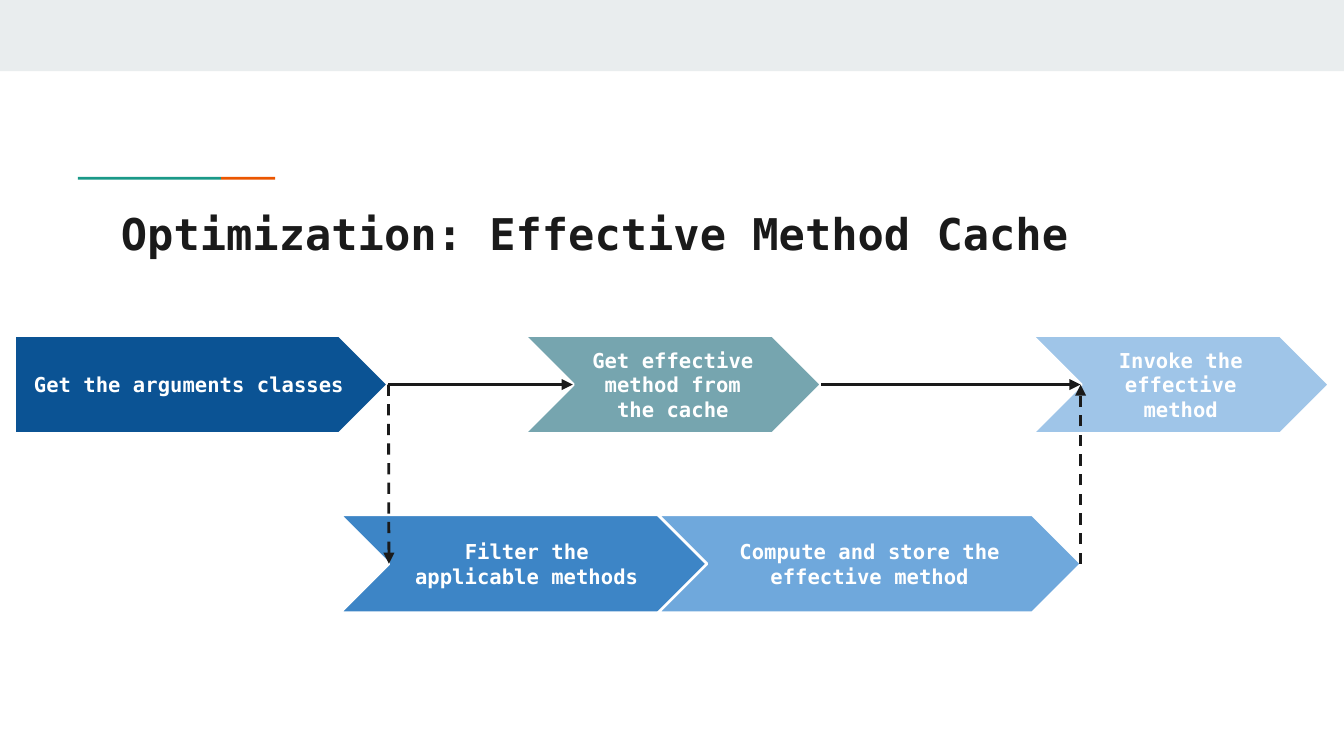
from pptx import Presentation
from pptx.dml.color import RGBColor
from pptx.enum.dml import MSO_LINE
from pptx.enum.shapes import MSO_CONNECTOR, MSO_SHAPE
from pptx.enum.text import MSO_ANCHOR, PP_ALIGN
from pptx.oxml.ns import qn
from pptx.util import Pt
from lxml.etree import SubElement

FONT = "DejaVu Sans Mono"
INK, WHITE = "1A1A1A", "FFFFFF"
STEP_H = 52.5


def color(code):
    return RGBColor.from_string(code)


def block(slide, kind, box, fill):
    shape = slide.shapes.add_shape(kind, *map(Pt, box))
    shape.shadow.inherit = False
    shape.fill.solid()
    shape.fill.fore_color.rgb = color(fill)
    shape.line.fill.background()
    return shape


def write(shape, text, size, code, align, anchor):
    frame = shape.text_frame
    frame.word_wrap = True
    frame.vertical_anchor = anchor
    frame.margin_left = frame.margin_right = Pt(7.2)
    frame.margin_top = frame.margin_bottom = Pt(7.2)
    para = frame.paragraphs[0]
    para.alignment = align
    run = para.add_run()
    run.text = text
    font = run.font
    font.name, font.size, font.bold = FONT, Pt(size), True
    font.color.rgb = color(code)


def arrow(slide, start, end, dashed=False):
    link = slide.shapes.add_connector(
        MSO_CONNECTOR.STRAIGHT, *map(Pt, start + end))
    link.line.width = Pt(1.5)
    link.line.color.rgb = color(INK)
    if dashed:
        link.line.dash_style = MSO_LINE.DASH
    props = link._element.spPr
    SubElement(props.find(qn("a:ln")), qn("a:tailEnd"), type="triangle")
    SubElement(props, qn("a:effectLst"))


def header(slide, box):
    """Draw the top band, the two-colour accent rule and the title."""
    left, top, width, height = box
    block(slide, MSO_SHAPE.RECTANGLE, (left, top, width, 38.2), "E9EDEE")
    x = left + 41.8
    for span, fill in ((76.6, "1A9988"), (29, "EB5600")):
        block(slide, MSO_SHAPE.RECTANGLE, (x, top + 94.8, span, 1.5), fill)
        x += span
    title = slide.shapes.title
    title.left, title.top = Pt(left + 57.6), Pt(top + 103.7)
    title.width, title.height = Pt(605.5), Pt(height - 103.7)
    write(title, "Optimization: Effective Method Cache", 23.4, INK,
          PP_ALIGN.LEFT, MSO_ANCHOR.TOP)


def step(slide, kind, box, fill, text):
    shape = block(slide, kind, box, fill)
    shape.adjustments[0] = 0.5
    shape.line.color.rgb = color(WHITE)
    shape.line.width = Pt(1.5)
    write(shape, text, 11, WHITE, PP_ALIGN.CENTER, MSO_ANCHOR.MIDDLE)


def flow(slide, box):
    """Draw the cached path on top and the fallback path below it."""
    left, top, width, height = box
    low = top + height - STEP_H
    plate, chevron = MSO_SHAPE.PENTAGON, MSO_SHAPE.CHEVRON
    steps = (
        (plate, 0, top, 200.2, "0B5394", "Get the arguments classes"),
        (chevron, 174.4, low, 200.2, "3D85C6",
         "Filter the applicable methods"),
        (chevron, 344.8, low, 226.8, "6FA8DC",
         "Compute and store the effective method"),
        (chevron, width - 159.1, top, 159.1, "9FC5E8",
         "Invoke the effective method"),
        (chevron, 273.2, top, 159.1, "76A5AF",
         "Get effective method from the cache"),
    )
    for kind, x, y, span, fill, text in steps:
        step(slide, kind, (left + x, y, span, STEP_H), fill, text)

    high_mid, low_mid = top + STEP_H / 2, low + STEP_H / 2
    fork, join = left + 200.4, left + 571.2
    arrow(slide, (fork, high_mid), (fork + 0.3, low_mid), dashed=True)
    arrow(slide, (fork, high_mid), (left + 299.2, high_mid))
    arrow(slide, (left + 432.3, high_mid), (join, high_mid))
    arrow(slide, (join, low_mid), (join, high_mid), dashed=True)


def main():
    deck = Presentation()
    deck.slide_width, deck.slide_height = Pt(720), Pt(405)
    slide = deck.slides.add_slide(deck.slide_layouts[5])
    header(slide, (0, 0, 720, 146.2))
    flow(slide, (7.7, 179.8, 704.4, 148.5))
    deck.save("out.pptx")


if __name__ == "__main__":
    main()
